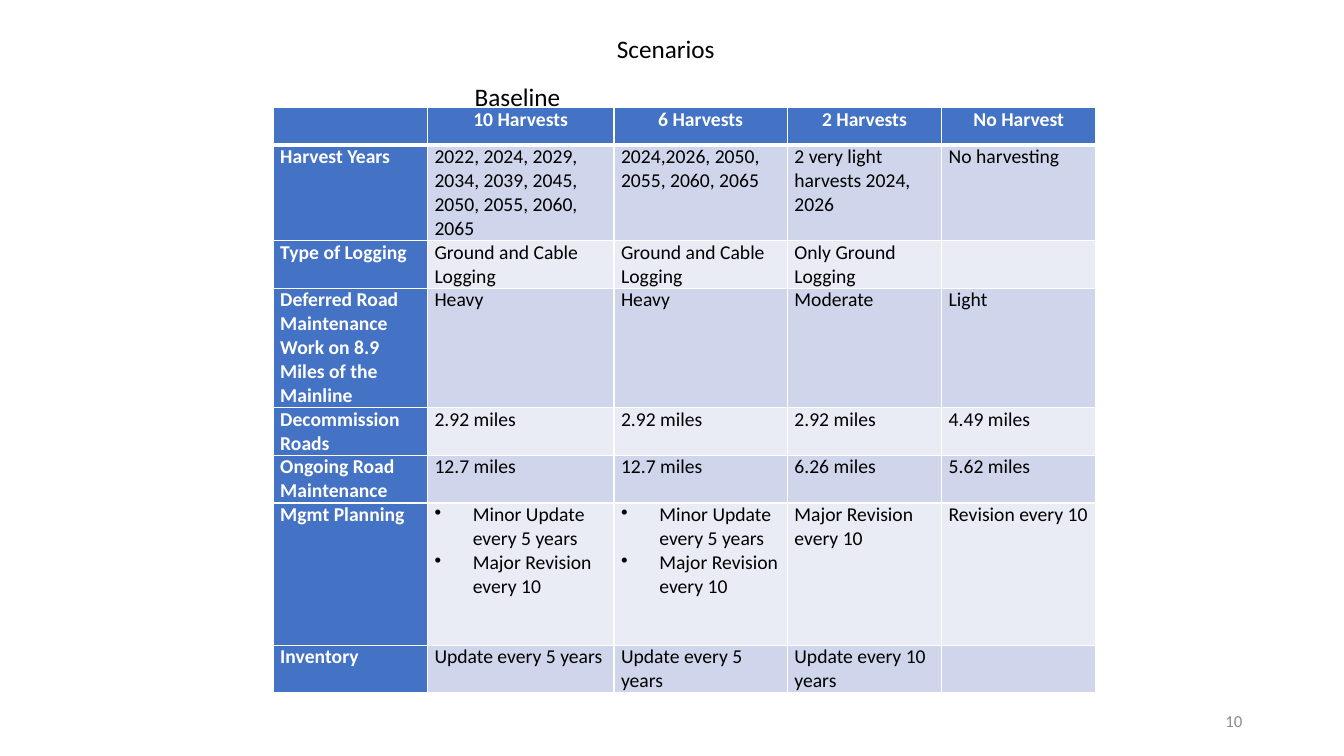
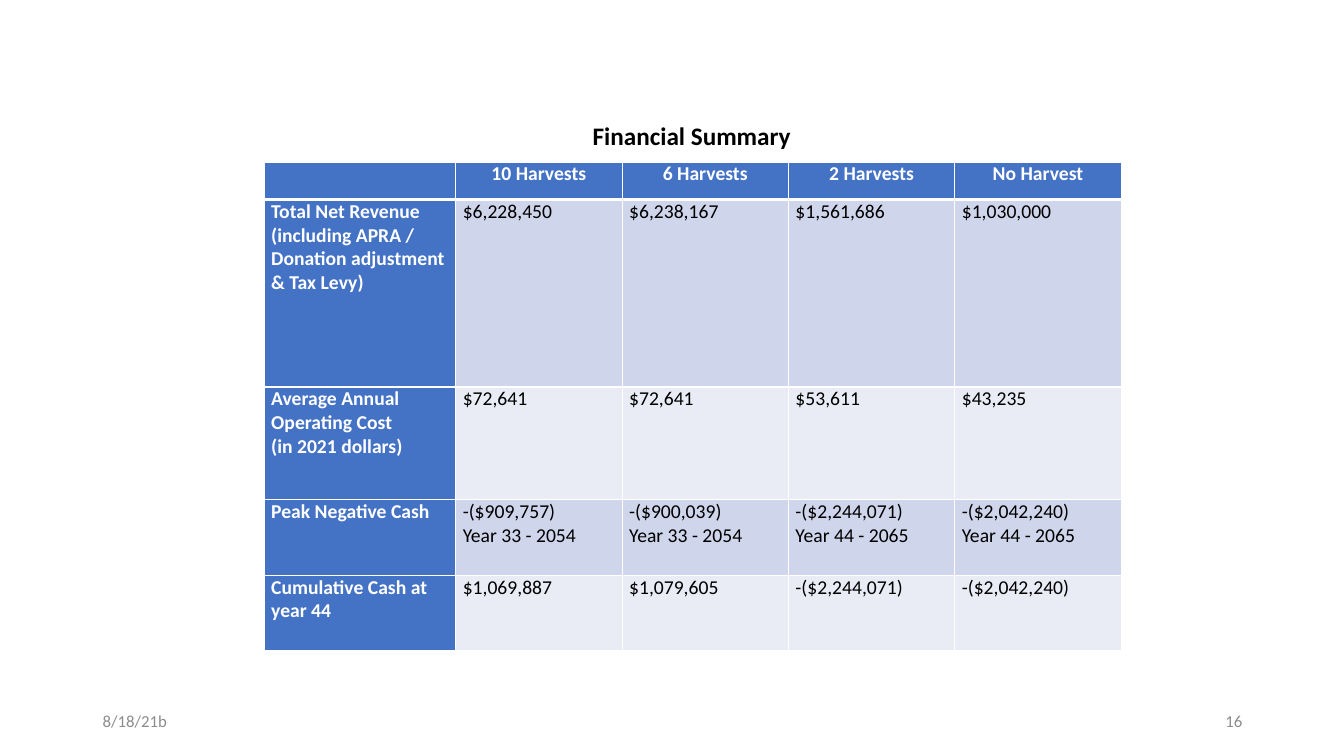
from dataclasses import dataclass
from typing import NamedTuple

from pptx import Presentation
from pptx.dml.color import RGBColor
from pptx.enum.text import MSO_ANCHOR, MSO_AUTO_SIZE, PP_ALIGN
from pptx.oxml import parse_xml
from pptx.oxml.ns import nsdecls
from pptx.slide import Slide
from pptx.table import _Cell as Cell
from pptx.text.text import TextFrame
from pptx.util import Emu, Pt

EMU_PER_PX = 9144  # 100 px to the inch
SLIDE_WIDTH, SLIDE_HEIGHT = 1333, 750

BLACK = RGBColor(0x00, 0x00, 0x00)
WHITE = RGBColor(0xFF, 0xFF, 0xFF)
GREY = RGBColor(0x8C, 0x8C, 0x8C)
BLUE = RGBColor(0x44, 0x72, 0xC4)
BANDS = (RGBColor(0xCF, 0xD5, 0xEA), RGBColor(0xE9, 0xEB, 0xF5))

FONT = "Calibri"
TITLE_SIZE, TABLE_SIZE, FOOTER_SIZE = 18, 14, 12
THIN, THICK = 1, 3
CELL_INSET, BULLET_INDENT = 7, 38
LABEL_HEIGHT = 40
FOOTER_TOP, FOOTER_WIDTH = 695, 300
DATE_LEFT, NUMBER_LEFT = 92, 942


class Bullets(NamedTuple):
    items: tuple[str, ...]


Content = str | Bullets
HEADER: tuple[Content, ...] = ("", "10 Harvests", "6 Harvests", "2 Harvests", "No Harvest")


@dataclass(frozen=True)
class Label:
    text: str
    left: int
    top: int
    width: int
    bold: bool = False


@dataclass(frozen=True)
class TableSpec:
    left: int
    top: int
    column_widths: tuple[int, ...]
    row_heights: tuple[int, ...]
    body: tuple[tuple[Content, ...], ...]


@dataclass(frozen=True)
class SlideSpec:
    labels: tuple[Label, ...]
    table: TableSpec
    number: str
    date: str = ""


PLANNING = Bullets(("Minor Update every 5 years", "Major Revision every 10"))

SCENARIOS = SlideSpec(
    labels=(Label("Scenarios", 602, 28, 118), Label("Baseline", 461, 76, 106)),
    table=TableSpec(
        left=271,
        top=107,
        column_widths=(153, 185, 172, 153, 153),
        row_heights=(37, 94, 47, 117, 47, 47, 141, 47),
        body=(
            ("Harvest Years",
             "2022, 2024, 2029, 2034, 2039, 2045,\n2050, 2055, 2060, 2065",
             "2024,2026, 2050, 2055, 2060, 2065",
             "2 very light harvests 2024, 2026",
             "No harvesting"),
            ("Type of Logging", "Ground and Cable Logging", "Ground and Cable Logging",
             "Only Ground Logging", ""),
            ("Deferred Road Maintenance Work on 8.9 Miles of the Mainline",
             "Heavy", "Heavy", "Moderate", "Light"),
            ("Decommission Roads", "2.92 miles", "2.92 miles", "2.92 miles", "4.49 miles"),
            ("Ongoing Road Maintenance", "12.7 miles", "12.7 miles", "6.26 miles", "5.62 miles"),
            ("Mgmt Planning", PLANNING, PLANNING, "Major Revision every 10", "Revision every 10"),
            ("Inventory", "Update every 5 years", "Update every 5 years",
             "Update every 10 years", ""),
        ),
    ),
    number="10",
)

FINANCIAL_SUMMARY = SlideSpec(
    labels=(Label("Financial Summary", 578, 114, 218, bold=True),),
    table=TableSpec(
        left=262,
        top=161,
        column_widths=(190, 165, 165, 165, 165),
        row_heights=(37, 186, 112, 75, 75),
        body=(
            ("Total Net Revenue (including APRA / Donation adjustment & Tax Levy)",
             "$6,228,450", "$6,238,167", "$1,561,686", "$1,030,000"),
            ("Average Annual Operating Cost\n(in 2021 dollars)",
             "$72,641", "$72,641", "$53,611", "$43,235"),
            ("Peak Negative Cash",
             "-($909,757)\nYear 33 - 2054", "-($900,039)\nYear 33 - 2054",
             "-($2,244,071)\nYear 44 - 2065", "-($2,042,240)\nYear 44 - 2065"),
            ("Cumulative Cash at year 44",
             "$1,069,887", "$1,079,605", "-($2,244,071)", "-($2,042,240)"),
        ),
    ),
    number="16",
    date="8/18/21b",
)


def px(length: int) -> Emu:
    return Emu(length * EMU_PER_PX)


def format_text(text_frame: TextFrame, size: int, color: RGBColor, bold: bool = False,
                align: PP_ALIGN = PP_ALIGN.LEFT) -> None:
    for paragraph in text_frame.paragraphs:
        paragraph.alignment = align
        for run in paragraph.runs:
            run.font.name = FONT
            run.font.size = Pt(size)
            run.font.bold = bold
            run.font.color.rgb = color


def add_label(slide: Slide, label: Label) -> None:
    shape = slide.shapes.add_textbox(px(label.left), px(label.top),
                                     px(label.width), px(LABEL_HEIGHT))
    text_frame = shape.text_frame
    text_frame.text = label.text
    text_frame.word_wrap = False
    text_frame.auto_size = MSO_AUTO_SIZE.SHAPE_TO_FIT_TEXT
    format_text(text_frame, TITLE_SIZE, BLACK, label.bold)


def add_footer(slide: Slide, text: str, left: int, align: PP_ALIGN) -> None:
    shape = slide.shapes.add_textbox(px(left), px(FOOTER_TOP),
                                     px(FOOTER_WIDTH), px(LABEL_HEIGHT))
    text_frame = shape.text_frame
    text_frame.text = text
    text_frame.word_wrap = True
    text_frame.vertical_anchor = MSO_ANCHOR.MIDDLE
    format_text(text_frame, FOOTER_SIZE, GREY, align=align)


def set_borders(cell: Cell, top: int, bottom: int) -> None:
    """Draw white borders; the side lines are always thin."""
    properties = cell._tc.get_or_add_tcPr()
    widths = {"lnL": THIN, "lnR": THIN, "lnT": top, "lnB": bottom}
    for index, (tag, width) in enumerate(widths.items()):
        properties.insert(index, parse_xml(
            f'<a:{tag} {nsdecls("a")} w="{Pt(width)}"><a:solidFill>'
            f'<a:srgbClr val="{WHITE}"/></a:solidFill></a:{tag}>'))


def add_bullets(text_frame: TextFrame) -> None:
    for paragraph in text_frame.paragraphs:
        properties = paragraph._p.get_or_add_pPr()
        properties.set("marL", str(px(BULLET_INDENT)))
        properties.set("indent", str(px(-BULLET_INDENT)))
        properties.append(parse_xml(f'<a:buChar {nsdecls("a")} char="•"/>'))


def fill_cell(cell: Cell, content: Content, row: int, column: int) -> None:
    is_heading = row == 0 or column == 0
    is_bulleted = isinstance(content, Bullets)
    text_frame = cell.text_frame
    text_frame.text = "\n".join(content.items) if is_bulleted else content
    format_text(text_frame, TABLE_SIZE, WHITE if is_heading else BLACK, is_heading,
                PP_ALIGN.CENTER if row == 0 else PP_ALIGN.LEFT)
    if is_bulleted:
        add_bullets(text_frame)
    cell.margin_left = cell.margin_right = px(CELL_INSET)
    cell.margin_top = cell.margin_bottom = 0
    cell.fill.solid()
    cell.fill.fore_color.rgb = BLUE if is_heading else BANDS[(row - 1) % 2]
    set_borders(cell, top=THICK if row == 1 else THIN, bottom=THICK if row == 0 else THIN)


def add_harvest_table(slide: Slide, spec: TableSpec) -> None:
    table = slide.shapes.add_table(
        len(spec.row_heights), len(spec.column_widths), px(spec.left), px(spec.top),
        px(sum(spec.column_widths)), px(sum(spec.row_heights))).table
    table.first_row = table.horz_banding = False
    for column, width in zip(table.columns, spec.column_widths):
        column.width = px(width)
    for row, height in zip(table.rows, spec.row_heights):
        row.height = px(height)
    for row_index, contents in enumerate((HEADER, *spec.body)):
        for column_index, content in enumerate(contents):
            fill_cell(table.cell(row_index, column_index), content, row_index, column_index)


def build_slide(presentation: Presentation, spec: SlideSpec) -> None:
    slide = presentation.slides.add_slide(presentation.slide_layouts[6])
    add_harvest_table(slide, spec.table)
    for label in spec.labels:
        add_label(slide, label)
    add_footer(slide, spec.number, NUMBER_LEFT, PP_ALIGN.RIGHT)
    if spec.date:
        add_footer(slide, spec.date, DATE_LEFT, PP_ALIGN.LEFT)


def main() -> None:
    presentation = Presentation()
    presentation.slide_width = px(SLIDE_WIDTH)
    presentation.slide_height = px(SLIDE_HEIGHT)
    for spec in (SCENARIOS, FINANCIAL_SUMMARY):
        build_slide(presentation, spec)
    presentation.save("out.pptx")


if __name__ == "__main__":
    main()
